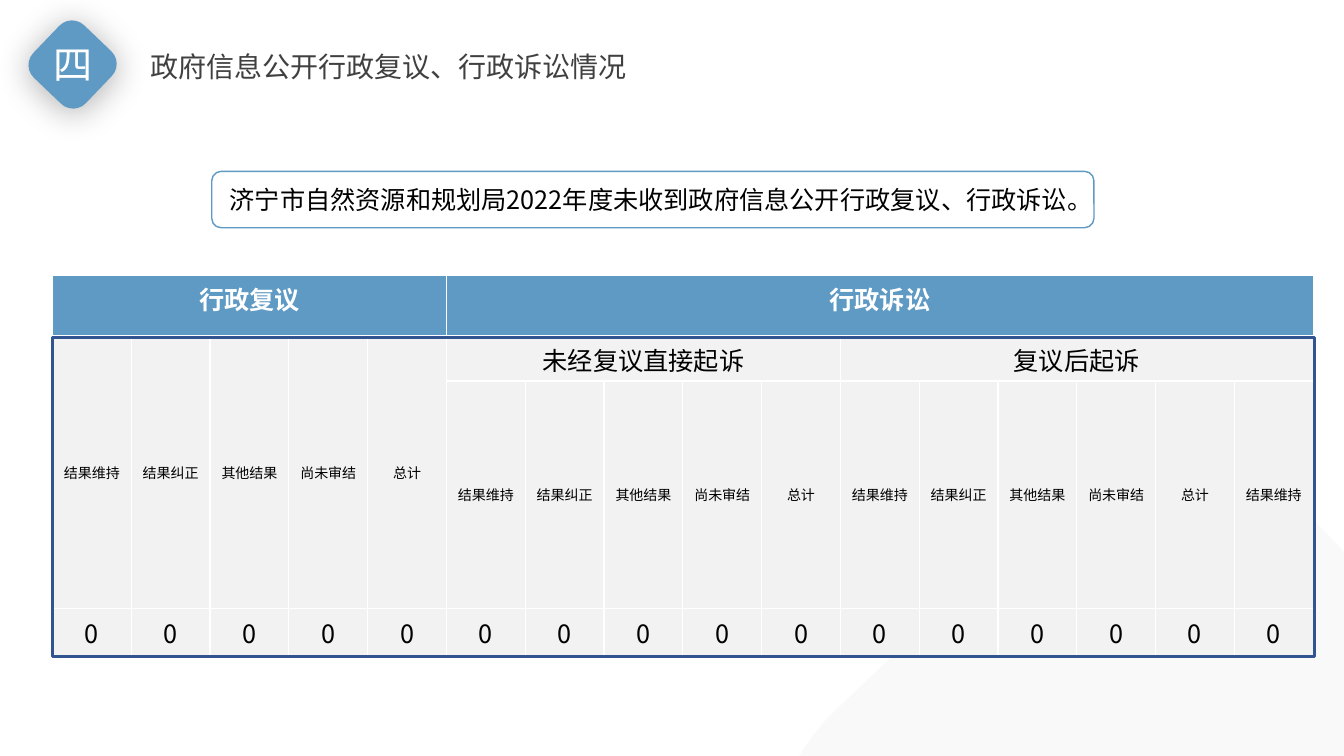
from dataclasses import dataclass
from typing import Optional

from lxml import etree
from pptx import Presentation
from pptx.dml.color import RGBColor
from pptx.enum.shapes import MSO_SHAPE
from pptx.enum.text import MSO_ANCHOR, PP_ALIGN
from pptx.oxml.ns import qn
from pptx.util import Inches, Pt

ROUNDED, RECT = MSO_SHAPE.ROUNDED_RECTANGLE, MSO_SHAPE.RECTANGLE
LEFT, CENTER = PP_ALIGN.LEFT, PP_ALIGN.CENTER
TOP, MIDDLE = MSO_ANCHOR.TOP, MSO_ANCHOR.MIDDLE
FONT = "Noto Sans CJK SC"
COLORS = {
    "blue": "5E9AC3", "navy": "325491", "pale": "F2F2F2",
    "white": "FFFFFF", "gray": "404040", "black": "000000",
}
LABELS = ["结果维持", "结果纠正", "其他结果", "尚未审结", "总计"]
N_COLS = 16
COL_WIDTH = 12.51 / N_COLS
ROW_HEIGHTS = [0.61, 0.44, 2.26, 0.46]


@dataclass
class Panel:
    """Preset shape with its place and look."""
    kind: int
    left: float
    top: float
    width: float
    height: float
    fill: Optional[str] = None
    line: Optional[str] = None
    line_width: float = 1
    corner: Optional[float] = None
    rotation: float = 0
    alpha: Optional[int] = None


@dataclass
class Label:
    """Text box with its place and look."""
    text: str
    left: float
    top: float
    width: float
    height: float
    size: float
    color: str
    align: int = LEFT


@dataclass
class Entry:
    """Table cell with its span and look."""
    row: int
    col: int
    text: str
    rows: int = 1
    cols: int = 1
    size: float = 18
    header: bool = False
    anchor: int = TOP


def rgb(name: str) -> RGBColor:
    """Return a named colour."""
    return RGBColor.from_string(COLORS[name])


def add_run(p, text: str, size: float, color: str, align: int, bold: bool = False) -> None:
    """Add one styled run to a paragraph."""
    p.alignment = align
    r = p.add_run()
    r.text = text
    r.font.size, r.font.bold, r.font.name = Pt(size), bold, FONT
    r.font.color.rgb = rgb(color)
    etree.SubElement(r._r.get_or_add_rPr(), qn("a:ea"), typeface=FONT)


def add_panel(shapes, panel: Panel):
    """Draw a preset shape."""
    box = (panel.left, panel.top, panel.width, panel.height)
    s = shapes.add_shape(panel.kind, *map(Inches, box))
    s.shadow.inherit = False
    s.rotation = panel.rotation
    if panel.corner is not None:
        s.adjustments[0] = panel.corner
    if panel.fill:
        s.fill.solid()
        s.fill.fore_color.rgb = rgb(panel.fill)
    else:
        s.fill.background()
    if panel.alpha:
        color = s._element.spPr.find(".//" + qn("a:srgbClr"))
        etree.SubElement(color, qn("a:alpha"), val=str(panel.alpha * 1000))
    if panel.line:
        s.line.color.rgb = rgb(panel.line)
        s.line.width = Pt(panel.line_width)
    else:
        s.line.fill.background()
    return s


def add_label(shapes, label: Label) -> None:
    """Draw a text box."""
    box = (label.left, label.top, label.width, label.height)
    tf = shapes.add_textbox(*map(Inches, box)).text_frame
    tf.word_wrap = True
    add_run(tf.paragraphs[0], label.text, label.size, label.color, label.align)


def add_shadow(s) -> None:
    """Give a shape a soft shadow below it."""
    effects = s._element.spPr.find(qn("a:effectLst"))
    shadow = etree.SubElement(
        effects, qn("a:outerShdw"), blurRad=str(Pt(25)), dist=str(Pt(3)),
        dir="5400000", algn="t", rotWithShape="0")
    color = etree.SubElement(shadow, qn("a:srgbClr"), val=COLORS["black"])
    etree.SubElement(color, qn("a:alpha"), val="31000")


def style_cell(cell, row: int) -> None:
    """Set the borders and fill of a cell."""
    tc_pr = cell._tc.get_or_add_tcPr()
    thick = {0: "lnB", 1: "lnT"}.get(row)
    for side in ("lnL", "lnR", "lnT", "lnB"):
        width = Pt(3 if side == thick else 1)
        ln = etree.SubElement(tc_pr, qn("a:" + side), w=str(width))
        fill = etree.SubElement(ln, qn("a:solidFill"))
        etree.SubElement(fill, qn("a:srgbClr"), val=COLORS["white"])
    cell.fill.solid()
    cell.fill.fore_color.rgb = rgb("pale" if row else "blue")


def table_entries() -> list[Entry]:
    """List the cells of the table."""
    entries = [
        Entry(0, 0, "行政复议", cols=5, header=True),
        Entry(0, 5, "行政诉讼", cols=11, header=True),
        Entry(1, 5, "未经复议直接起诉", cols=5),
        Entry(1, 10, "复议后起诉", cols=6),
    ]
    for col in range(N_COLS):
        row, rows = (1, 2) if col < 5 else (2, 1)
        text = LABELS[col % len(LABELS)]
        entries.append(Entry(row, col, text, rows, size=10, anchor=MIDDLE))
        entries.append(Entry(3, col, "0"))
    return entries


def add_case_table(shapes) -> None:
    """Draw the table of reviews and lawsuits."""
    table = shapes.add_table(
        len(ROW_HEIGHTS), N_COLS, Inches(0.52), Inches(2.73),
        Inches(COL_WIDTH * N_COLS), Inches(sum(ROW_HEIGHTS))).table
    for column in table.columns:
        column.width = Inches(COL_WIDTH)
    for i, height in enumerate(ROW_HEIGHTS):
        table.rows[i].height = Inches(height)
        for col in range(N_COLS):
            style_cell(table.cell(i, col), i)
    for e in table_entries():
        cell = table.cell(e.row, e.col)
        if e.rows * e.cols > 1:
            cell.merge(table.cell(e.row + e.rows - 1, e.col + e.cols - 1))
        cell.vertical_anchor = e.anchor
        if e.anchor == MIDDLE:
            cell.margin_left = cell.margin_right = Inches(0.07)
            cell.margin_top = cell.margin_bottom = 0
        color = "white" if e.header else "black"
        add_run(cell.text_frame.paragraphs[0], e.text, e.size, color, CENTER, e.header)


def main() -> None:
    """Build the slide and save it."""
    prs = Presentation()
    prs.slide_width, prs.slide_height = Inches(13.33), Inches(7.5)
    shapes = prs.slides.add_slide(prs.slide_layouts[6]).shapes
    badge = shapes.add_group_shape().shapes
    add_shadow(add_panel(badge, Panel(
        ROUNDED, 0.36, 0.28, 0.72, 0.72, "blue", corner=0.24, rotation=313.7)))
    add_label(badge, Label("四", 0.37, 0.35, 0.71, 0.57, 28, "white", CENTER))
    add_panel(shapes, Panel(
        ROUNDED, 8.22, 5.18, 6.76, 6.76, "pale", corner=0.3, rotation=316.5, alpha=40))
    add_label(shapes, Label(
        "政府信息公开行政复议、行政诉讼情况", 1.39, 0.44, 6.56, 0.44, 20, "gray"))
    add_case_table(shapes)
    add_label(shapes, Label(
        "济宁市自然资源和规划局2022年度未收到政府信息公开行政复议、行政诉讼。",
        2.18, 1.78, 10.17, 0.4, 18, "black"))
    add_panel(shapes, Panel(ROUNDED, 2.1, 1.7, 8.75, 0.56, line="blue"))
    add_panel(shapes, Panel(
        RECT, 0.52, 3.35, 12.52, 3.16, line="navy", line_width=2.25))
    prs.save("out.pptx")


if __name__ == "__main__":
    main()
